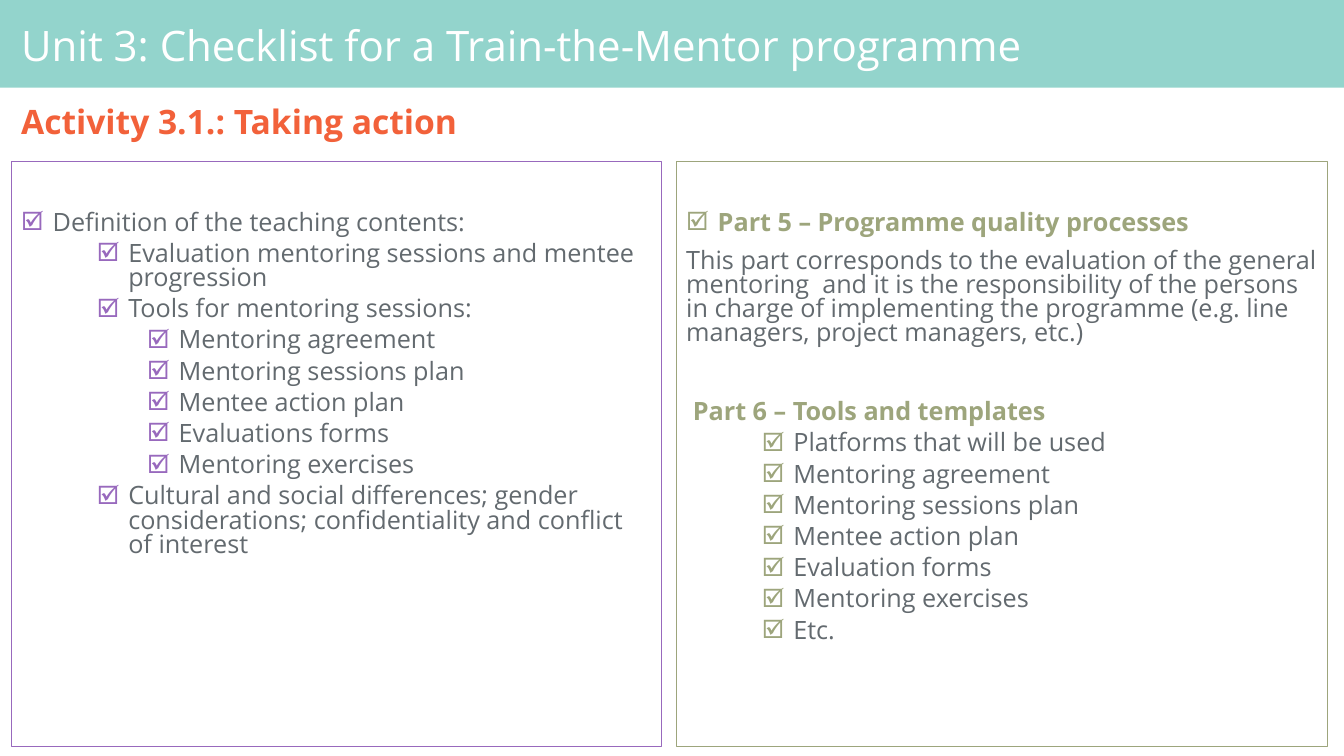
from lxml.etree import SubElement
from pptx import Presentation
from pptx.dml.color import RGBColor
from pptx.enum.shapes import MSO_SHAPE
from pptx.enum.text import MSO_ANCHOR, MSO_AUTO_SIZE, PP_ALIGN
from pptx.oxml.ns import qn
from pptx.util import Pt

HUES = {"teal": "93D4CC", "red": "F2613A", "white": "FFFFFF",
        "grey": "636A6F", "plum": "9869BD", "sage": "9DA57C"}
FONT = "Open Sans"
WIDE, HIGH = 960, 540
EDGE, GAP = 7.92, 10.08
HANG = 22.5
STEPS = [HANG, 76.5, 112.5]

TOOLS = ["Mentoring agreement", "Mentoring sessions plan", "Mentee action plan"]
LEFT = [
    ("Definition of the teaching contents:", 0, {}),
    ("Evaluation mentoring sessions and mentee progression", 1, {}),
    ("Tools for mentoring sessions:", 1, {}),
    *[(tool, 2, {}) for tool in TOOLS + ["Evaluations forms", "Mentoring exercises"]],
    ("Cultural and social differences; gender considerations; "
     "confidentiality and conflict of interest", 1, {}),
]
RIGHT = [
    ("Part 5 – Programme quality processes", 0, {"bold": True}),
    ("This part corresponds to the evaluation of the general mentoring  and it is "
     "the responsibility of the persons in charge of implementing the programme "
     "(e.g. line managers, project managers, etc.)", 0, {"tick": False}),
    ("Part 6 – Tools and templates", 0,
     {"bold": True, "tick": False, "inset": 4.7, "above": 39}),
    *[(tool, 1, {}) for tool in ["Platforms that will be used", *TOOLS,
                                 "Evaluation forms", "Mentoring exercises", "Etc."]],
]


def tint(name):
    return RGBColor.from_string(HUES[name])


def place(shape, box, anchor, pads):
    shape.left, shape.top, shape.width, shape.height = map(Pt, box)
    frame = shape.text_frame
    frame.word_wrap = True
    frame.auto_size = MSO_AUTO_SIZE.NONE
    frame.vertical_anchor = anchor
    (frame.margin_left, frame.margin_top,
     frame.margin_right, frame.margin_bottom) = map(Pt, pads)
    return frame


def style(para, size, hue, bold=False):
    for run in para.runs:
        font = run.font
        font.name, font.size, font.bold = FONT, Pt(size), bold
        font.color.rgb = tint(hue)


def mark(para, hue, tick, left):
    props = para._p.get_or_add_pPr()
    props.set("marL", str(Pt(left)))
    props.set("indent", str(Pt(-HANG if tick else 0)))
    if tick:
        color = SubElement(props, qn("a:buClr"))
        SubElement(color, qn("a:srgbClr"), val=HUES[hue])
        SubElement(props, qn("a:buFont"), typeface=FONT)
        SubElement(props, qn("a:buChar"), char="🗹")
    else:
        SubElement(props, qn("a:buNone"))


def header(slide, title, box):
    left, top, width, height = box
    band = slide.shapes.add_shape(MSO_SHAPE.RECTANGLE, *map(Pt, box))
    band.shadow.inherit = False
    band.fill.solid()
    band.fill.fore_color.rgb = tint("teal")
    band.line.fill.background()
    slide.shapes._spTree.insert(2, band._element)
    frame = place(title, (left + EDGE, top + 6.5, width - 2 * EDGE - 4, height - 6.5),
                  MSO_ANCHOR.MIDDLE, (7.2, 4, 4, 4))
    frame.text = "Unit 3: Checklist for a Train-the-Mentor programme"
    para = frame.paragraphs[0]
    para.alignment, para.line_spacing = PP_ALIGN.LEFT, 0.9
    style(para, 30, "white")


def heading(shape, box):
    frame = place(shape, box, MSO_ANCHOR.MIDDLE, (7.2, 3.6, 7.2, 3.6))
    frame.text = "Activity 3.1.: Taking action"
    para = frame.paragraphs[0]
    para.alignment, para.line_spacing, para.space_before = PP_ALIGN.JUSTIFY, 0.9, Pt(0)
    mark(para, "red", False, 0)
    style(para, 24, "red", True)


def panel(shape, box, hue, items):
    frame = place(shape, box, MSO_ANCHOR.TOP, (7.2, 36, 7.2, 3.6))
    shape.line.color.rgb = tint(hue)
    shape.line.width = Pt(0.75)
    frame.text = "\n".join(text for text, level, look in items)
    for order, (para, (text, level, look)) in enumerate(zip(frame.paragraphs, items)):
        tick, bold = look.get("tick", True), look.get("bold", False)
        para.level, para.line_spacing = level, 0.8
        para.space_before = Pt(look.get("above", 5 if level else 10) if order else 0)
        mark(para, hue, tick, STEPS[level] if tick else look.get("inset", 0))
        style(para, 18, hue if bold else "grey", bold)


def main():
    deck = Presentation()
    deck.slide_width, deck.slide_height = Pt(WIDE), Pt(HIGH)
    slide = deck.slides.add_slide(deck.slide_layouts[4])
    parts = {hold.placeholder_format.idx: hold for hold in slide.placeholders}
    spare = parts[3]._element
    spare.getparent().remove(spare)
    header(slide, parts[0], (0, 0, WIDE, 62.64))
    heading(parts[1], (EDGE, 67, 940, 43.2))
    width = (940 - GAP) / 2
    for index, (hold, hue, items) in enumerate(
            [(parts[2], "plum", LEFT), (parts[4], "sage", RIGHT)]):
        panel(hold, (EDGE + index * (width + GAP), 115.2, width, 418.3), hue, items)
    deck.save("out.pptx")


if __name__ == "__main__":
    main()
